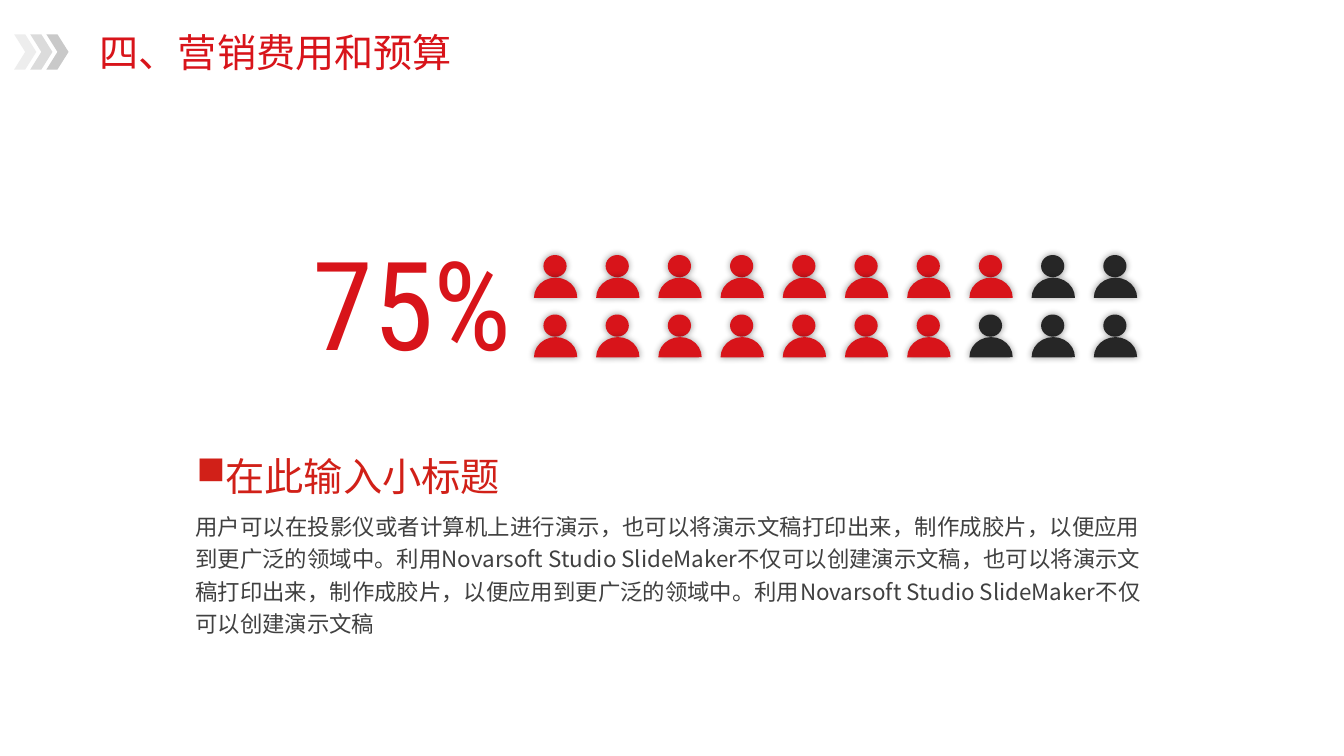
import pptx
import pptx.dml.color
import pptx.enum.dml
import pptx.enum.shapes
import pptx.enum.text
import pptx.oxml.ns
import pptx.util
from lxml import etree

Inches = pptx.util.Inches
Shapes = pptx.enum.shapes.MSO_SHAPE
qn = pptx.oxml.ns.qn

COLORS = {
    "red": "D8141A",
    "heading": "D12018",
    "dark": "262626",
    "body": "404040",
    "shadow": "000000",
    "chevrons": ["EDEDED", "DBDBDB", "C9C9C9"],
}
TITLE_FONT = "Noto Sans CJK JP"
BODY_FONT = "Noto Sans CJK SC"
NUMBER_FONT = "Roboto Condensed"
SENTENCE = "利用Novarsoft Studio SlideMaker不仅可以创建演示文稿"
PRINTING = "也可以将演示文稿打印出来，制作成胶片，以便应用到更广泛的领域中。"
BODY_TEXT = f"用户可以在投影仪或者计算机上进行演示，{PRINTING}{SENTENCE}，{PRINTING}{SENTENCE}"


def add_filled_shape(shapes, kind, left, top, width, height, color):
    """Add a borderless, shadowless preset shape in one colour."""
    shape = shapes.add_shape(kind, Inches(left), Inches(top), Inches(width), Inches(height))
    shape.shadow.inherit = False
    shape.fill.solid()
    shape.fill.fore_color.rgb = pptx.dml.color.RGBColor.from_string(color)
    shape.line.fill.background()
    return shape


def add_glow(shape):
    """Give the shape a soft shadow spreading evenly around it."""
    effects = shape._element.spPr.find(qn("a:effectLst"))
    shadow = etree.SubElement(effects, qn("a:outerShdw"), blurRad=str(pptx.util.Pt(5)),
                              dist="0", dir="0", algn="ctr", rotWithShape="0")
    color = etree.SubElement(shadow, qn("a:srgbClr"), val=COLORS["shadow"])
    etree.SubElement(color, qn("a:alpha"), val="40000")


def add_text(slide, box, text, size, font_name, color, wrap=True):
    """Add a one-paragraph text box and return its paragraph."""
    frame = slide.shapes.add_textbox(*map(Inches, box)).text_frame
    frame.word_wrap = wrap
    frame.auto_size = pptx.enum.text.MSO_AUTO_SIZE.SHAPE_TO_FIT_TEXT
    paragraph = frame.paragraphs[0]
    paragraph.text = text
    paragraph.font.size = pptx.util.Pt(size)
    paragraph.font.name = font_name
    paragraph.font.color.rgb = pptx.dml.color.RGBColor.from_string(color)
    properties = paragraph._p.pPr.find(qn("a:defRPr"))
    etree.SubElement(properties, qn("a:ea"), typeface=font_name)
    return paragraph


def add_square_bullet(paragraph, indent):
    """Put a square bullet before the paragraph."""
    properties = paragraph._p.pPr
    properties.set("marL", "0")
    properties.set("indent", str(Inches(indent)))
    bullet = etree.Element(qn("a:buChar"), char="■")
    properties.find(qn("a:defRPr")).addprevious(bullet)


def add_header(slide, left, top):
    """Draw the three chevrons and the slide title."""
    group = slide.shapes.add_group_shape()
    for index, color in enumerate(COLORS["chevrons"]):
        add_filled_shape(group.shapes, Shapes.CHEVRON, left + index * 0.16, top + 0.11,
                         0.22, 0.35, color)
    add_text(slide, (left + 0.75, top, 3.74, 0.57), "四、营销费用和预算",
             28, TITLE_FONT, COLORS["red"], wrap=False)


def add_person(slide, left, top, color):
    """Draw a head above half-round shoulders."""
    group = slide.shapes.add_group_shape()
    head = add_filled_shape(group.shapes, Shapes.OVAL, left + 0.08, top, 0.23, 0.22, color)
    shoulders = add_filled_shape(group.shapes, Shapes.PIE, left, top + 0.21, 0.4, 0.43, color)
    shoulders.rotation = 90
    shoulders.adjustments[0] = 53.712
    shoulders.adjustments[1] = 162
    add_glow(head)
    add_glow(shoulders)


def add_people(slide, left, top, red_counts, columns=10):
    """Draw rows of people, the first ones of each row in red."""
    for row, red_count in enumerate(red_counts):
        for column in range(columns):
            color = COLORS["red" if column < red_count else "dark"]
            add_person(slide, left + column * 0.617, top + row * 0.59, color)


def add_description(slide, left, top):
    """Write the bulleted subtitle and the justified text below it."""
    subtitle = add_text(slide, (left + 0.01, top, 4.68, 0.67), "在此输入小标题",
                        28, TITLE_FONT, COLORS["heading"])
    subtitle.line_spacing = 1.2
    add_square_bullet(subtitle, -0.38)
    body = add_text(slide, (left, top + 0.65, 9.57, 1.37), BODY_TEXT,
                    16, BODY_FONT, COLORS["body"])
    body.line_spacing = 1.2
    body.alignment = pptx.enum.text.PP_ALIGN.JUSTIFY


def main():
    """Build the budget slide and save it."""
    presentation = pptx.Presentation()
    presentation.slide_width = Inches(13.33)
    presentation.slide_height = Inches(7.5)
    slide = presentation.slides.add_slide(presentation.slide_layouts[6])
    add_header(slide, 0.14, 0.23)
    add_people(slide, 5.31, 2.53, red_counts=(8, 7))
    add_text(slide, (3, 2.21, 3.43, 1.58), "75%", 88, NUMBER_FONT, COLORS["red"])
    add_description(slide, 1.84, 4.34)
    presentation.save("out.pptx")


if __name__ == "__main__":
    main()
